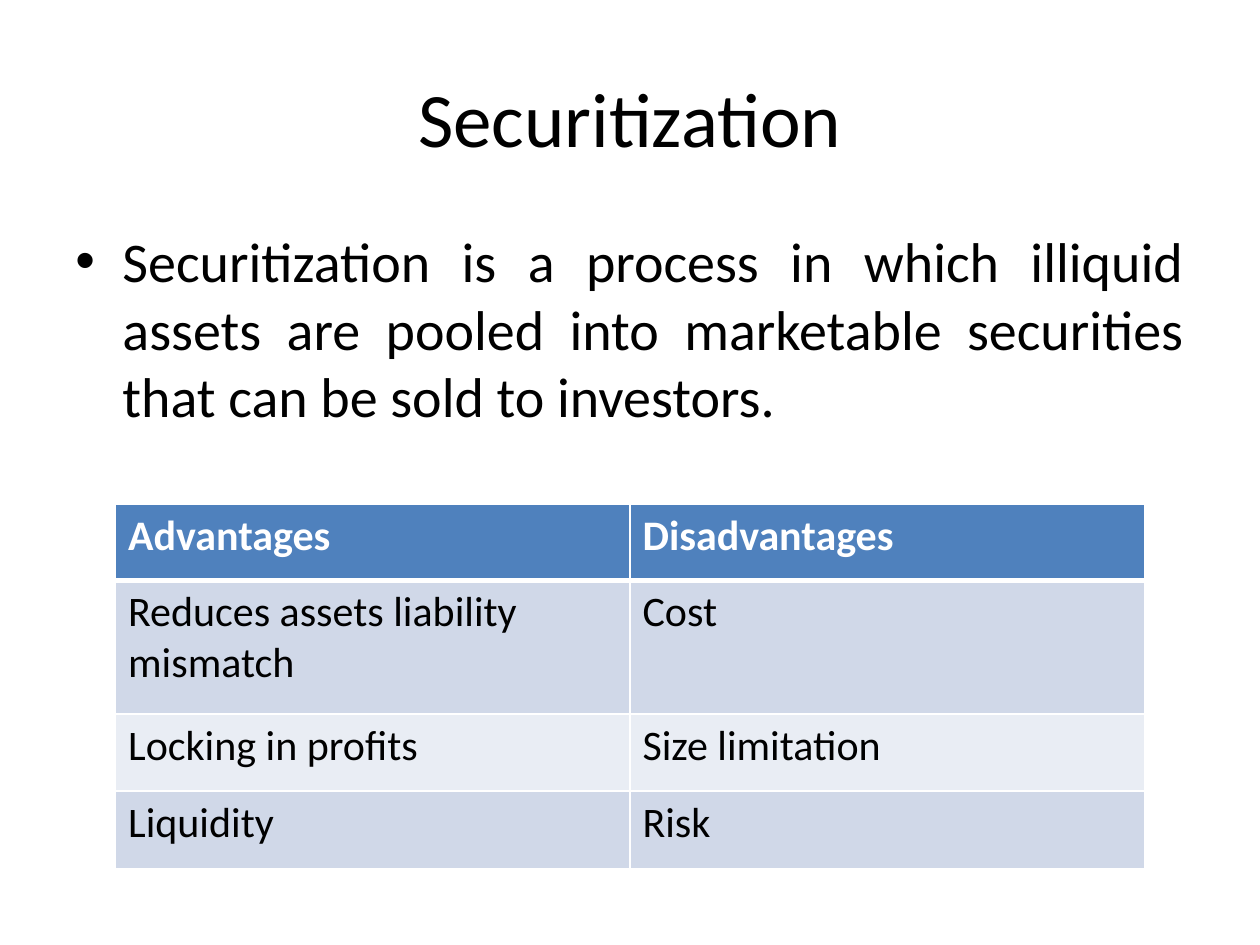
from dataclasses import dataclass

from lxml.etree import SubElement
from pptx import Presentation
from pptx.dml.color import RGBColor
from pptx.enum.text import MSO_ANCHOR as Anchor, PP_ALIGN as Align
from pptx.oxml.ns import qn
from pptx.util import Cm, Pt


@dataclass(frozen=True)
class Theme:
    font: str = "Calibri"
    ink: str = "000000"
    paper: str = "FFFFFF"
    header: str = "4F81BD"
    bands: tuple = ("D0D8E8", "E9EDF4")
    title_size: int = 44
    body_size: int = 32
    table_size: int = 24
    thin: int = 1
    thick: int = 3


class Builder:
    """Adds styled elements to the current page."""

    def __init__(self, page, theme):
        self.page = page
        self.theme = theme

    def style(self, para, size, color, align=Align.LEFT, bold=False):
        para.alignment = align
        font = para.font
        font.name, font.size, font.bold = self.theme.font, Pt(size), bold
        font.color.rgb = RGBColor.from_string(color)

    def text(self, words, left, top, width, height, size, align, anchor=Anchor.TOP):
        box = self.page.shapes.add_textbox(Cm(left), Cm(top), Cm(width), Cm(height))
        frame = box.text_frame
        frame.word_wrap = True
        frame.vertical_anchor = anchor
        para = frame.paragraphs[0]
        para.text = words
        self.style(para, size, self.theme.ink, align)
        return para

    def bullet(self, para, indent):
        props = para._p.get_or_add_pPr()
        props.set("marL", str(Cm(indent)))
        props.set("indent", str(-Cm(indent)))
        mark_font = props.makeelement(qn("a:buFont"), {"typeface": "Arial"})
        mark = props.makeelement(qn("a:buChar"), {"char": "•"})
        props.insert(0, mark_font)
        mark_font.addnext(mark)

    def borders(self, cell, top, bottom):
        props = cell._tc.get_or_add_tcPr()
        thin = self.theme.thin
        for side, width in zip("LRTB", (thin, thin, top, bottom)):
            line = SubElement(props, qn(f"a:ln{side}"), w=str(Pt(width)))
            fill = SubElement(line, qn("a:solidFill"))
            SubElement(fill, qn("a:srgbClr"), val=self.theme.paper)

    def table(self, rows, left, top, width, heights):
        theme = self.theme
        columns = len(rows[0])
        table = self.page.shapes.add_table(
            len(rows), columns, Cm(left), Cm(top), Cm(width), Cm(sum(heights))
        ).table
        for column in table.columns:
            column.width = Cm(width / columns)
        for r, (words, height) in enumerate(zip(rows, heights)):
            table.rows[r].height = Cm(height)
            is_header = r == 0
            fill = theme.header if is_header else theme.bands[(r - 1) % 2]
            color = theme.paper if is_header else theme.ink
            for c, word in enumerate(words):
                cell = table.cell(r, c)
                self.borders(
                    cell,
                    top=theme.thick if r == 1 else theme.thin,
                    bottom=theme.thick if is_header else theme.thin,
                )
                cell.fill.solid()
                cell.fill.fore_color.rgb = RGBColor.from_string(fill)
                cell.text = word
                self.style(cell.text_frame.paragraphs[0], theme.table_size,
                           color, bold=is_header)


def main():
    deck = Presentation()
    deck.slide_width, deck.slide_height = Cm(25.4), Cm(19.05)
    theme = Theme()
    builder = Builder(deck.slides.add_slide(deck.slide_layouts[6]), theme)

    # Title
    builder.text("Securitization", 1.27, 0.76, 22.86, 3.18,
                 theme.title_size, Align.CENTER, Anchor.MIDDLE)

    # Definition
    definition = builder.text(
        "Securitization is a process in which illiquid assets are pooled into "
        "marketable securities that can be sold to investors.",
        1.27, 4.45, 22.86, 12.57, theme.body_size, Align.JUSTIFY)
    builder.bullet(definition, 0.95)

    # Pros and cons
    builder.table(
        [
            ("Advantages", "Disadvantages"),
            ("Reduces assets liability mismatch", "Cost"),
            ("Locking in profits", "Size limitation"),
            ("Liquidity", "Risk"),
        ],
        2.33, 10.16, 20.74, (1.54, 2.69, 1.56, 1.56))

    deck.save("out.pptx")


if __name__ == "__main__":
    main()
